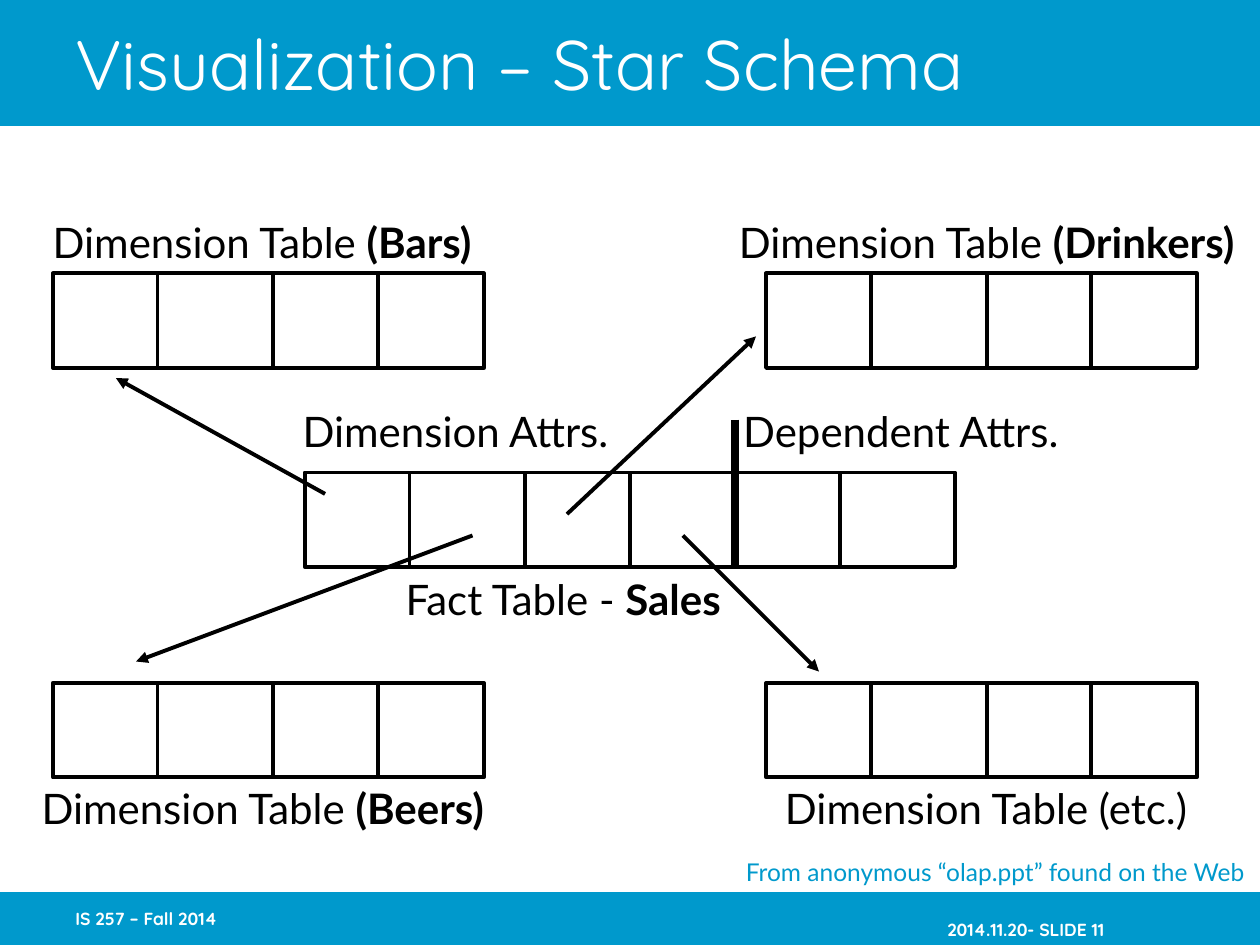
"""Build the star schema slide: a fact table linked to four dimension tables."""
from lxml.etree import SubElement
from pptx import Presentation
from pptx.dml.color import RGBColor
from pptx.enum.shapes import MSO_CONNECTOR, MSO_SHAPE
from pptx.enum.text import MSO_ANCHOR, MSO_AUTO_SIZE, PP_ALIGN
from pptx.oxml.ns import qn
from pptx.util import Inches, Pt

HUES = {"band": "0099CC", "ink": "000000", "page": "FFFFFF"}
HIGH = 0.75

deck = Presentation()
deck.slide_width, deck.slide_height = Inches(10), Inches(7.5)
slide = deck.slides.add_slide(deck.slide_layouts[6])
shapes = slide.shapes


def add_text(spot, runs, size, font, hue, label=False):
    box = shapes.add_textbox(*map(Inches, spot))
    frame = box.text_frame
    frame.word_wrap = not label
    frame.vertical_anchor = MSO_ANCHOR.TOP if label else MSO_ANCHOR.MIDDLE
    para = frame.paragraphs[0]
    if label:
        frame.auto_size = MSO_AUTO_SIZE.SHAPE_TO_FIT_TEXT
        para.alignment = PP_ALIGN.CENTER
    for words, bold in runs:
        run = para.add_run()
        run.text = words
        run.font.name = font
        run.font.size = Pt(size)
        run.font.bold = bold
        run.font.color.rgb = RGBColor.from_string(HUES[hue])


def add_line(start, end, width=2.25, arrow=False):
    line = shapes.add_connector(MSO_CONNECTOR.STRAIGHT, *map(Inches, start + end))
    line.line.color.rgb = RGBColor.from_string(HUES["ink"])
    line.line.width = Pt(width)
    if arrow:
        SubElement(line.line._get_or_add_ln(), qn("a:tailEnd"), type="triangle")
    SubElement(line._element.spPr, qn("a:effectLst"))
    return line


for top, height in [(0, 1), (7.08, 0.42)]:
    band = shapes.add_shape(MSO_SHAPE.RECTANGLE, 0, Inches(top),
                            Inches(10), Inches(height))
    band.shadow.inherit = False
    band.fill.solid()
    band.fill.fore_color.rgb = RGBColor.from_string(HUES["band"])
    band.line.fill.background()

add_text((0.5, 0, 8.5, 1), [("Visualization – Star Schema", False)],
         40, "Quicksand", "page")
for spot, words in [
    ((7.42, 7.26, 2.08, 0.24), "2014.11.20- SLIDE 11"),
    ((0.5, 7.08, 2.08, 0.42), "IS 257 – Fall 2014"),
]:
    add_text(spot, [(words, True)], 10, "Quicksand", "page")

cuts = [0.83, 1.75, 2.58]
tables = [(2.42, 3.75, 5.16, cuts + [4.25])]
tables += [(left, top, 3.42, cuts) for left in (0.42, 6.08) for top in (2.17, 5.42)]
for left, top, width, marks in tables:
    table = shapes.add_shape(MSO_SHAPE.RECTANGLE, Inches(left), Inches(top),
                             Inches(width), Inches(HIGH))
    table.shadow.inherit = False
    table.fill.background()
    table.line.color.rgb = RGBColor.from_string(HUES["ink"])
    table.line.width = Pt(2.25)
    for mark in marks:
        rule = add_line((left + mark, top), (left + mark, top + HIGH))
        if mark * 2 == width:
            rule.begin_connect(table, 0)
            rule.end_connect(table, 2)

add_line((5.83, 3.33), (5.83, 4.5), width=4.5)
for start, end in [
    ((2.58, 3.92), (0.92, 3)),
    ((3.75, 4.25), (1.08, 5.25)),
    ((4.5, 4.08), (6, 2.67)),
    ((5.42, 4.25), (6.5, 5.33)),
]:
    add_line(start, end, arrow=True)

labels = [
    (0.09, 6.16, 3.99, "Dimension Table ", "(Beers)"),
    (6.05, 6.16, 3.55, "Dimension Table (etc.)", ""),
    (5.59, 1.67, 4.48, "Dimension Table ", "(Drinkers)"),
    (0.18, 1.67, 3.8, "Dimension Table ", "(Bars)"),
    (3, 4.5, 2.94, "Fact Table - ", "Sales"),
    (2.3, 3.17, 2.63, "Dimension Attrs.", ""),
    (5.8, 3.17, 2.7, "Dependent Attrs.", ""),
]
for left, top, width, plain, strong in labels:
    runs = [(plain, False)] + ([(strong, True)] if strong else [])
    add_text((left, top, width, 0.5), runs, 24, "Lato", "ink", label=True)

add_text((5.8, 6.75, 4.2, 0.33),
         [("From anonymous “olap.ppt” found on the Web", False)],
         14, "Lato", "band", label=True)

deck.save("out.pptx")
